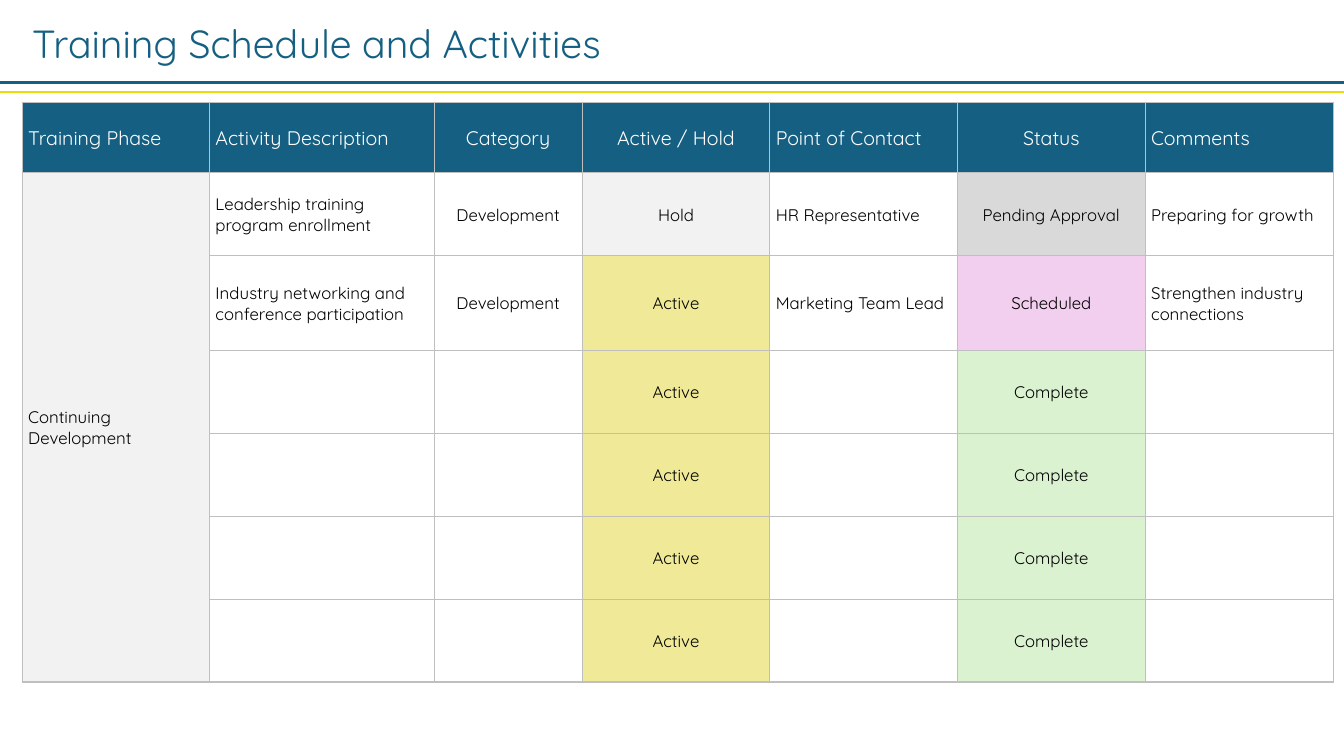
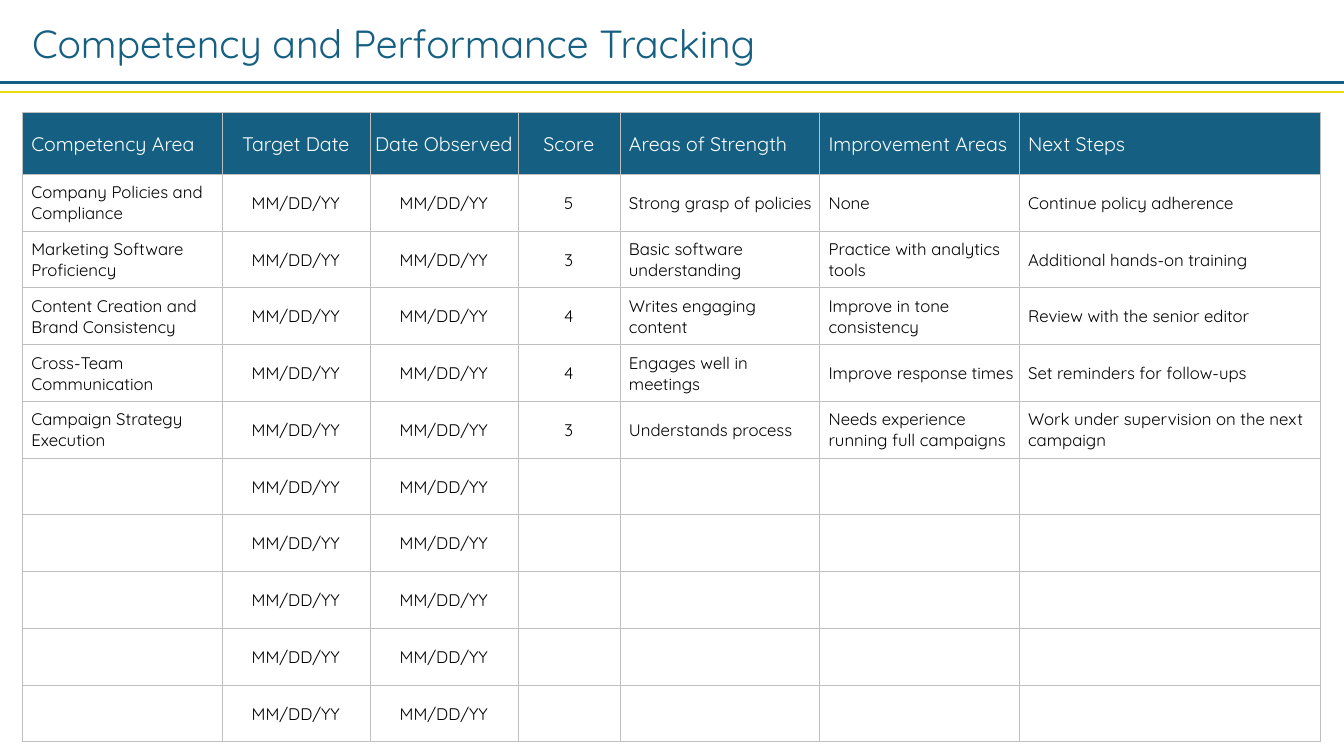
"""Build the training schedule and competency tracking slides."""
import dataclasses

import lxml.etree
import pptx
import pptx.dml.color
import pptx.enum.shapes
import pptx.enum.text
import pptx.oxml.ns
import pptx.util

Cm = pptx.util.Cm
Pt = pptx.util.Pt
qn = pptx.oxml.ns.qn


@dataclasses.dataclass(frozen=True)
class Theme:
    font: str = "Quicksand"
    blue: str = "156082"
    gold: str = "E8DD06"
    grid: str = "BFBFBF"
    pale: str = "F2F2F2"
    white: str = "FFFFFF"
    black: str = "000000"
    title: int = 28
    head: int = 14
    body: int = 12
    thin: float = 0.5
    thick: float = 1.5


THEME = Theme()
FILLS = {
    "Continuing Development": THEME.pale,
    "Hold": THEME.pale,
    "Active": "F0EA98",
    "Pending Approval": "D9D9D9",
    "Scheduled": "F2CEEF",
    "Complete": "DAF2D0",
}


def rgb(code):
    return pptx.dml.color.RGBColor.from_string(code)


def put(frame, text, size=THEME.body, color=THEME.black, center=False):
    align = pptx.enum.text.PP_ALIGN
    para = frame.paragraphs[0]
    para.alignment = align.CENTER if center else align.LEFT
    run = para.add_run()
    run.text = text
    run.font.name = THEME.font
    run.font.size = Pt(size)
    run.font.color.rgb = rgb(color)


class Deck:
    def __init__(self, theme):
        self.theme = theme
        self.show = pptx.Presentation()
        self.show.slide_width = Cm(33.87)
        self.show.slide_height = Cm(19.05)
        self.slide = None

    def page(self, title):
        self.slide = self.show.slides.add_slide(self.show.slide_layouts[6])
        self.title(title)
        self.rule(2.08, self.theme.blue)
        self.rule(2.32, self.theme.gold)

    def title(self, text):
        box = self.slide.shapes.add_textbox(Cm(0.56), Cm(0.36), Cm(20.52), Cm(1.45))
        box.text_frame.word_wrap = True
        put(box.text_frame, text, size=self.theme.title, color=self.theme.blue)

    def rule(self, top, color):
        kind = pptx.enum.shapes.MSO_CONNECTOR.STRAIGHT
        line = self.slide.shapes.add_connector(
            kind, 0, Cm(top), self.show.slide_width, Cm(top))
        line.line.color.rgb = rgb(color)
        line.line.width = Pt(self.theme.thick)
        lxml.etree.SubElement(line._element.spPr, qn("a:effectLst"))

    def edge(self, cell, side, width):
        props = cell._tc.get_or_add_tcPr()
        line = lxml.etree.SubElement(props, qn("a:ln" + side), w=str(Pt(width)))
        fill = lxml.etree.SubElement(line, qn("a:solidFill"))
        lxml.etree.SubElement(fill, qn("a:srgbClr"), val=self.theme.grid)

    def cell(self, cell, text, head, center, inset, base):
        for side in "LRTB":
            self.edge(cell, side, base if side == "B" else self.theme.thin)
        color = self.theme.blue if head else FILLS.get(text, self.theme.white)
        cell.fill.solid()
        cell.fill.fore_color.rgb = rgb(color)
        cell.vertical_anchor = pptx.enum.text.MSO_ANCHOR.MIDDLE
        cell.margin_left = Cm(0.03 if center else inset)
        cell.margin_right = cell.margin_top = Cm(0.03)
        cell.margin_bottom = 0
        if text:
            put(cell.text_frame, text, center=center,
                size=self.theme.head if head else self.theme.body,
                color=self.theme.white if head else self.theme.black)

    def table(self, top, wides, highs, rows, mid, inset, base=THEME.thin, span=False):
        frame = self.slide.shapes.add_table(
            len(rows), len(wides), Cm(0.56), Cm(top), Cm(sum(wides)), Cm(sum(highs)))
        grid = frame.table
        grid.first_row = grid.horz_banding = False
        for col, wide in zip(grid.columns, wides):
            col.width = Cm(wide)
        for row, high in zip(grid.rows, highs):
            row.height = Cm(high)
        last = len(rows) - 1
        for i, row in enumerate(rows):
            for j, text in enumerate(row):
                low = i == last or (span and i > 0 and j == 0)
                self.cell(grid.cell(i, j), text, i == 0, j in mid, inset,
                          base if low else self.theme.thin)
        if span:
            grid.cell(1, 0).merge(grid.cell(last, 0))


PLAN = [
    ["Training Phase", "Activity Description", "Category", "Active / Hold",
     "Point of Contact", "Status", "Comments"],
    ["Continuing Development", "Leadership training program enrollment",
     "Development", "Hold", "HR Representative", "Pending Approval",
     "Preparing for growth"],
    ["", "Industry networking and conference participation", "Development",
     "Active", "Marketing Team Lead", "Scheduled", "Strengthen industry connections"],
] + [["", "", "", "Active", "", "Complete", ""]] * 4

DATE = "MM/DD/YY"
SKILLS = [
    ["Company Policies and Compliance", "5", "Strong grasp of policies", "None",
     "Continue policy adherence"],
    ["Marketing Software Proficiency", "3", "Basic software understanding",
     "Practice with analytics tools", "Additional hands-on training"],
    ["Content Creation and Brand Consistency", "4", "Writes engaging content",
     "Improve in tone consistency", "Review with the senior editor"],
    ["Cross-Team Communication", "4", "Engages well in meetings",
     "Improve response times", "Set reminders for follow-ups"],
    ["Campaign Strategy Execution", "3", "Understands process",
     "Needs experience running full campaigns",
     "Work under supervision on the next campaign"],
] + [[""] * 5] * 5
TRACK = [
    ["Competency Area", "Target Date", "Date Observed", "Score",
     "Areas of Strength", "Improvement Areas", "Next Steps"],
] + [[area, DATE, DATE, *rest] for area, *rest in SKILLS]


def main():
    deck = Deck(THEME)
    deck.page("Training Schedule and Activities")
    deck.table(2.57, [4.72, 5.66, 3.73] + [4.73] * 4,
               [1.78, 2.09, 2.38] + [2.09] * 4, PLAN,
               mid=(2, 3, 5), inset=0.15, base=THEME.thick, span=True)
    deck.page("Competency and Performance Tracking")
    deck.table(2.82, [5.03, 3.73, 3.73, 2.57, 5.03, 5.03, 7.59],
               [1.57] + [1.43] * 10, TRACK, mid=(1, 2, 3), inset=0.23)
    deck.show.save("out.pptx")


if __name__ == "__main__":
    main()
